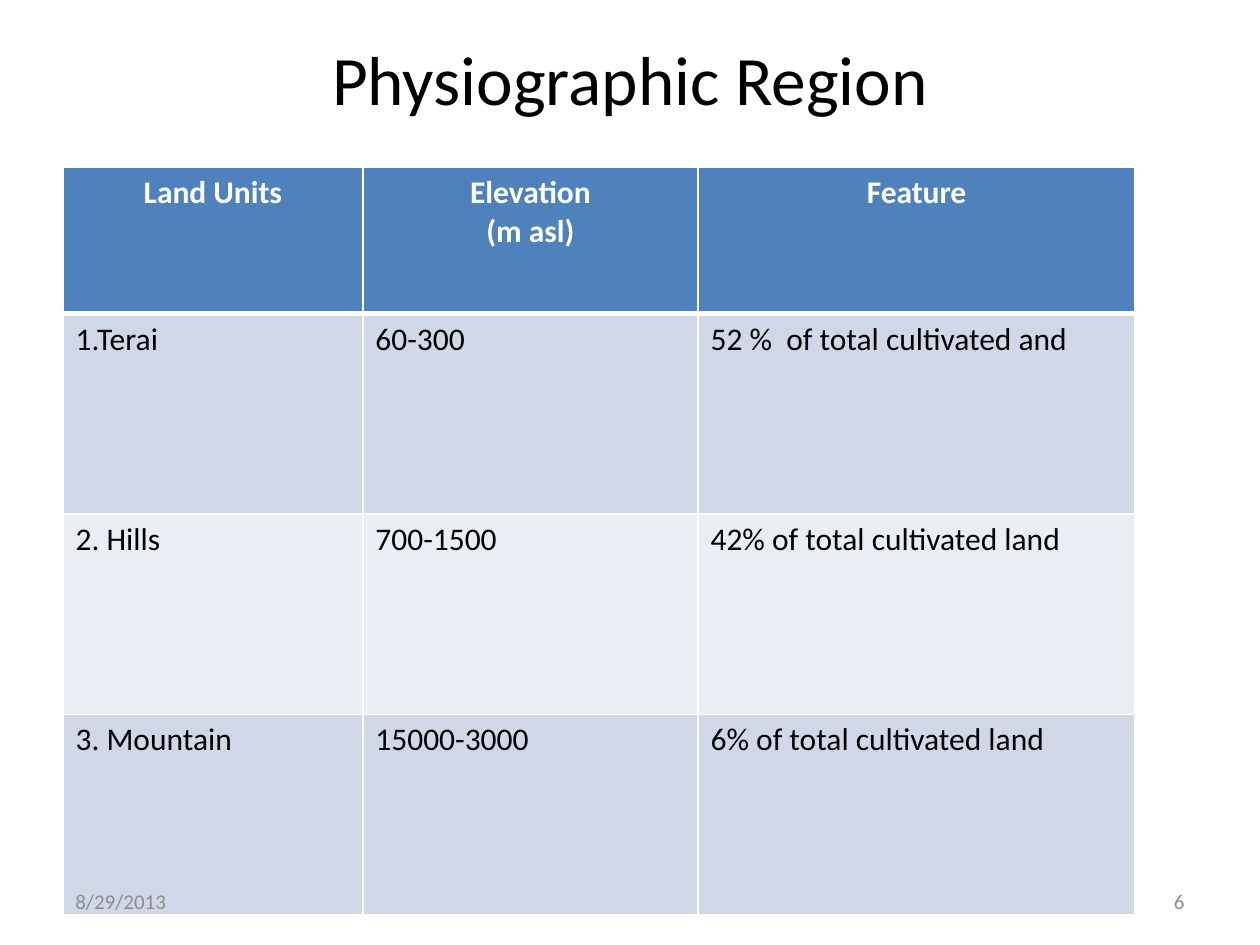
import dataclasses

import lxml.etree
import pptx
import pptx.dml.color
import pptx.enum.text
import pptx.oxml.ns
import pptx.util

Inches = pptx.util.Inches
Pt = pptx.util.Pt
ALIGN = pptx.enum.text.PP_ALIGN


@dataclasses.dataclass(frozen=True)
class Theme:
    font: str = "Calibri"
    title_size: float = 39.6
    table_size: float = 18
    footer_size: float = 12
    text: str = "000000"
    muted: str = "8C8C8C"
    header_text: str = "FFFFFF"
    header_fill: str = "4F81BD"
    bands: tuple = ("D0D8E8", "E9EDF4")
    border: str = "FFFFFF"
    thin: float = 1
    thick: float = 3


THEME = Theme()

ROWS = [
    ["Land Units", "Elevation\n(m asl)", "Feature"],
    ["1.Terai", "60-300", "52 %  of total cultivated and"],
    ["2. Hills", "700-1500", "42% of total cultivated land"],
    ["3. Mountain", "15000-3000", "6% of total cultivated land"],
]
COLUMN_WIDTHS = [2.38, 2.66, 3.47]
HEADER_HEIGHT, BODY_HEIGHT = 1.16, 1.59


def rgb(color):
    return pptx.dml.color.RGBColor.from_string(color)


def set_text(tf, text, size, color, align=ALIGN.LEFT, bold=False):
    tf.text = text
    for p in tf.paragraphs:
        p.alignment = align
        for r in p.runs:
            r.font.name = THEME.font
            r.font.size = Pt(size)
            r.font.bold = bold
            r.font.color.rgb = rgb(color)


def add_label(slide, text, box, size, color, align=ALIGN.LEFT):
    sp = slide.shapes.add_textbox(*map(Inches, box))
    tf = sp.text_frame
    tf.word_wrap = True
    tf.vertical_anchor = pptx.enum.text.MSO_ANCHOR.MIDDLE
    set_text(tf, text, size, color, align)


def set_borders(cell, top, bottom):
    tc_pr = cell._tc.get_or_add_tcPr()
    qn = pptx.oxml.ns.qn
    widths = {"lnL": THEME.thin, "lnR": THEME.thin, "lnT": top, "lnB": bottom}
    # Border lines come before the fill in the cell properties
    for i, (side, width) in enumerate(widths.items()):
        ln = lxml.etree.Element(qn("a:" + side), w=str(Pt(width)))
        fill = lxml.etree.SubElement(ln, qn("a:solidFill"))
        lxml.etree.SubElement(fill, qn("a:srgbClr"), val=THEME.border)
        tc_pr.insert(i, ln)


def add_region_table(slide, left, top):
    heights = [HEADER_HEIGHT] + [BODY_HEIGHT] * (len(ROWS) - 1)
    size = sum(COLUMN_WIDTHS), sum(heights)
    table = slide.shapes.add_table(
        len(ROWS), len(COLUMN_WIDTHS), *map(Inches, (left, top, *size))).table
    for column, width in zip(table.columns, COLUMN_WIDTHS):
        column.width = Inches(width)
    for i, (values, height) in enumerate(zip(ROWS, heights)):
        table.rows[i].height = Inches(height)
        header = i == 0
        fill = THEME.header_fill if header else THEME.bands[(i - 1) % 2]
        color = THEME.header_text if header else THEME.text
        align = ALIGN.CENTER if header else ALIGN.LEFT
        for j, value in enumerate(values):
            cell = table.cell(i, j)
            set_text(cell.text_frame, value, THEME.table_size, color, align, header)
            cell.fill.solid()
            cell.fill.fore_color.rgb = rgb(fill)
            # The header and the first body row share a thick line
            set_borders(cell, THEME.thick if i == 1 else THEME.thin,
                        THEME.thick if header else THEME.thin)


def main():
    prs = pptx.Presentation()
    prs.slide_width, prs.slide_height = Inches(10), Inches(7.5)
    slide = prs.slides.add_slide(prs.slide_layouts[6])

    # Title
    add_label(slide, "Physiographic Region", (0.75, 0.33, 8.5, 0.58),
              THEME.title_size, THEME.text, ALIGN.CENTER)

    # Table of land units
    add_region_table(slide, 0.5, 1.33)

    # Date and slide number
    add_label(slide, "8/29/2013", (0.5, 6.95, 2.33, 0.4),
              THEME.footer_size, THEME.muted)
    add_label(slide, "6", (7.17, 6.95, 2.33, 0.4),
              THEME.footer_size, THEME.muted, ALIGN.RIGHT)

    prs.save("out.pptx")


if __name__ == "__main__":
    main()
